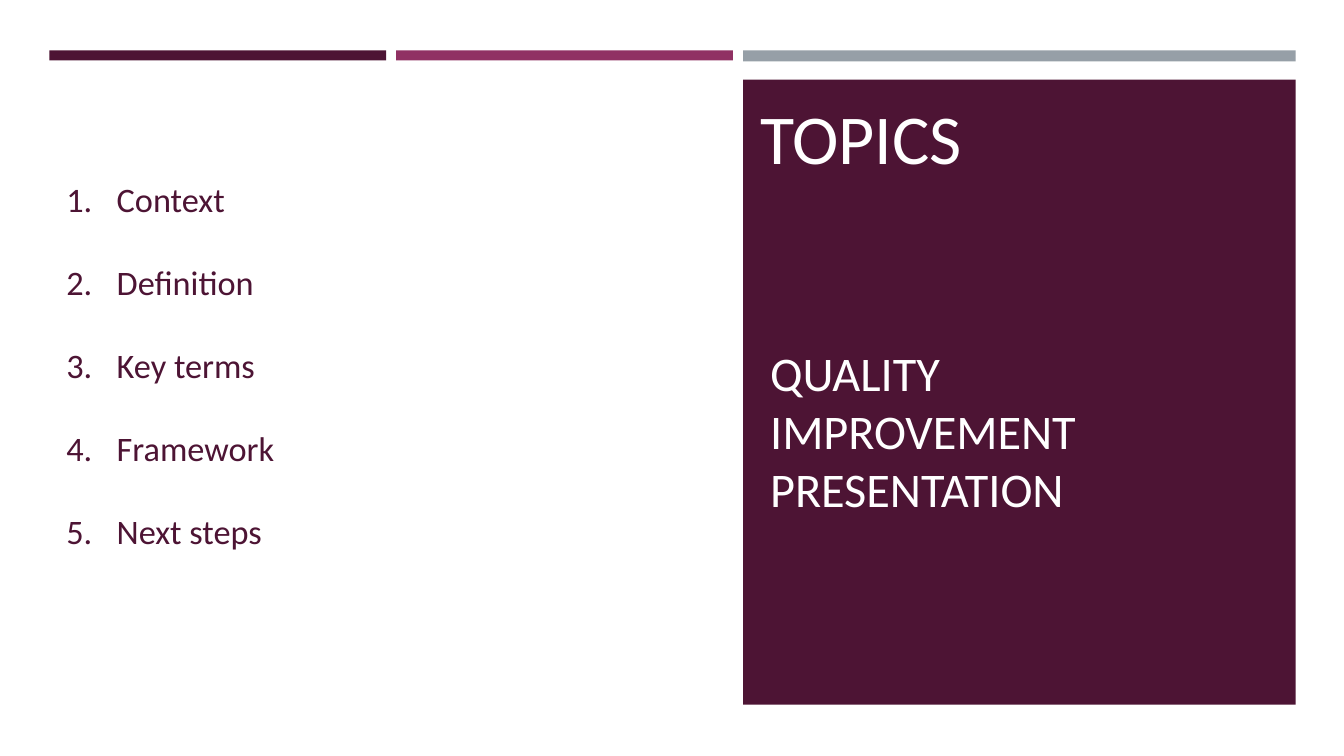
from lxml.etree import SubElement
from pptx import Presentation
from pptx.dml.color import RGBColor
from pptx.enum.shapes import MSO_SHAPE as Shape
from pptx.enum.text import MSO_ANCHOR as Anchor
from pptx.oxml.ns import qn
from pptx.util import Inches, Pt

COLORS = {"plum": "4D1434", "magenta": "903163", "gray": "969FA7", "white": "FFFFFF"}
FONT = "Calibri"
TOPICS = ["Context", "Definition", "Key terms", "Framework", "Next steps"]
ITEM_SIZE = 24.5
ITEM_GAP = 29.9
INDENT = Inches(0.5)


def add_bar(slide, left, top, width, height, color):
    bar = slide.shapes.add_shape(
        Shape.RECTANGLE, Inches(left), Inches(top), Inches(width), Inches(height))
    bar.shadow.inherit = False
    bar.fill.solid()
    bar.fill.fore_color.rgb = RGBColor.from_string(COLORS[color])
    bar.line.fill.background()


def add_text(slide, left, top, width, height, lines, size, color, gap=0, wrap=True):
    box = slide.shapes.add_textbox(
        Inches(left), Inches(top), Inches(width), Inches(height))
    frame = box.text_frame
    frame.word_wrap = wrap
    frame.text = "\n".join(lines)
    for paragraph in frame.paragraphs:
        paragraph.space_after = Pt(gap)
        paragraph.font.name = FONT
        paragraph.font.size = Pt(size)
        paragraph.font.color.rgb = RGBColor.from_string(COLORS[color])
    return frame


def add_header_bars(slide, left, top, width, panel_width):
    gap = 0.1
    bar_width = (width - panel_width - 2 * gap) / 2
    for column, color in enumerate(["plum", "magenta"]):
        add_bar(slide, left + column * (bar_width + gap), top, bar_width, 0.1, color)
    add_bar(slide, left + width - panel_width, top, panel_width, 0.11, "gray")


def add_title_panel(slide, left, top, width, height):
    add_bar(slide, left, top, width, height, "plum")
    subtitle = add_text(slide, left + 0.17, top + 1.02, 4.5, 3.37,
                        ["QUALITY IMPROVEMENT PRESENTATION"], 34.5, "white", gap=6)
    subtitle.vertical_anchor = Anchor.BOTTOM
    add_text(slide, left + 0.07, top + 0.1, 2.51, 0.94,
             ["TOPICS"], 50, "white", wrap=False)


def add_topic_list(slide, left, top, width, height):
    topics = add_text(slide, left, top, width, height,
                      TOPICS, ITEM_SIZE, "plum", gap=ITEM_GAP)
    for paragraph in topics.paragraphs:
        properties = paragraph._p.get_or_add_pPr()
        properties.set("marL", str(INDENT))
        properties.set("indent", str(-INDENT))
        numbering = SubElement(properties, qn("a:buAutoNum"))
        numbering.set("type", "arabicPeriod")
        properties.append(properties.find(qn("a:defRPr")))


def main():
    deck = Presentation()
    deck.slide_width = Inches(13.33)
    deck.slide_height = Inches(7.5)
    slide = deck.slides.add_slide(deck.slide_layouts[6])
    add_title_panel(slide, 7.37, 0.79, 5.48, 6.2)
    add_header_bars(slide, 0.49, 0.5, 12.36, 5.48)
    add_topic_list(slide, 0.56, 1.72, 6.74, 3.9)
    deck.save("out.pptx")


if __name__ == "__main__":
    main()
